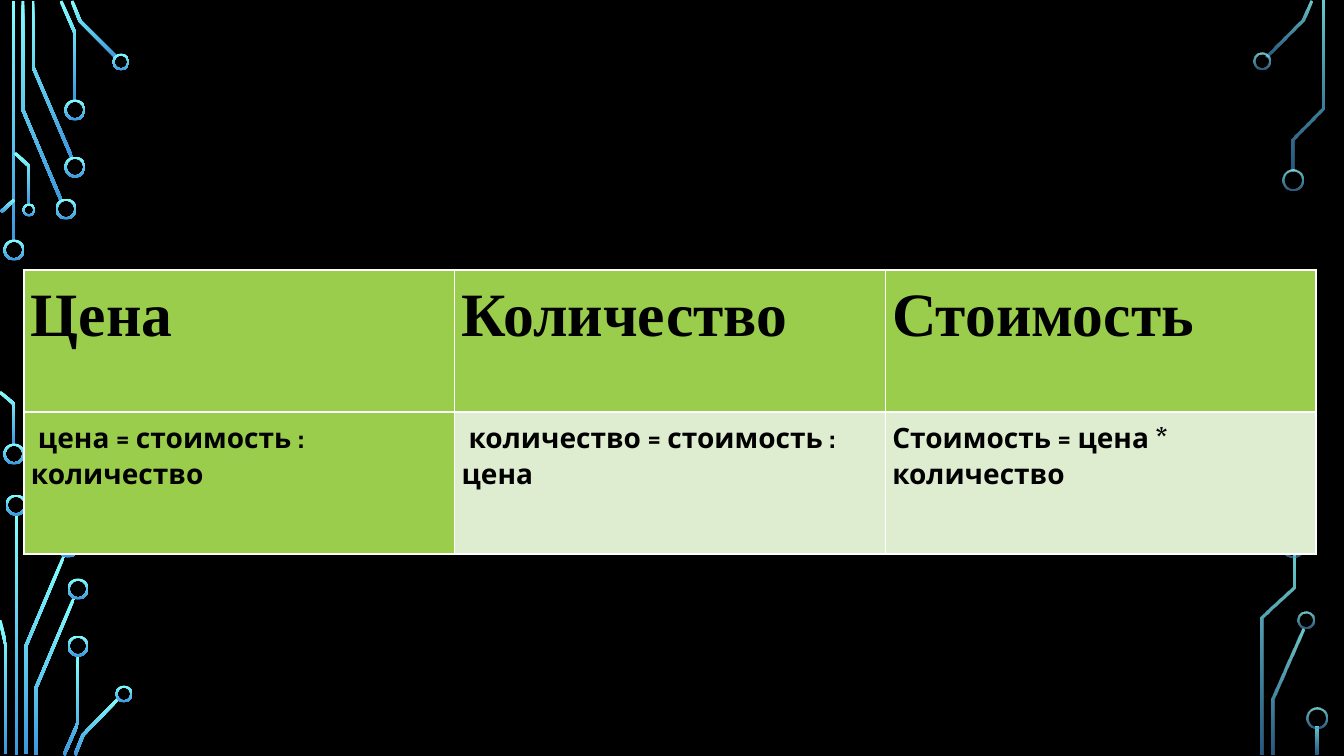
from dataclasses import dataclass
from math import hypot

from lxml import etree
from pptx import Presentation
from pptx.dml.color import RGBColor
from pptx.enum.shapes import MSO_SHAPE
from pptx.oxml.ns import qn
from pptx.util import Pt

DONUT, RECT = MSO_SHAPE.DONUT, MSO_SHAPE.RECTANGLE
SCALE = 914400 / 100.8


@dataclass(frozen=True)
class Theme:
    background: str = "000000"
    text: str = "000000"
    border: str = "FFFFFF"
    green: str = "9ACD4C"
    pale: str = "DEEDD0"
    glow: tuple = ("82FFFF", "3D97DE")
    solid: tuple = (100, 100)
    faded: tuple = (80, 60)
    head_font: str = "Times New Roman"
    head_size: int = 44
    body_font: str = "Cabin"
    body_size: int = 20


THEME = Theme()
TRACE_WIDTH = 3
RING_WIDTH = 2

# Circuit corners: box origin, opacity, bars (x, y, w, h), rings (cx, cy, d), traces
CORNERS = [
    dict(origin=(0, 0), opacity=THEME.solid,
         bars=[(12, 1, 3, 241)],
         rings=[(14, 250, 21), (14, 454, 21), (66, 209, 21), (75, 167, 21),
                (75, 110, 21), (121, 62, 17), (29, 210, 13)],
         traces=[[(61, 200), (23, 110), (23, 1)],
                 [(72, 158), (33, 67), (33, 1)],
                 [(75, 101), (75, 33), (61, 1)],
                 [(116, 57), (80, 21), (72, 1)],
                 [(1, 212), (14, 200)],
                 [(14, 444), (14, 404), (0, 392)],
                 [(29, 205), (29, 166), (15, 153)]]),
    dict(origin=(0, 500), opacity=THEME.solid,
         bars=[(15, 14, 3, 241)],
         rings=[(16, 5, 21), (68, 47, 21), (78, 89, 21), (78, 146, 21),
                (124, 194, 17)],
         traces=[[(26, 254), (26, 146), (64, 56)],
                 [(6, 254), (6, 146), (0, 120)],
                 [(36, 255), (36, 188), (74, 98)],
                 [(64, 255), (78, 223), (78, 155)],
                 [(75, 255), (83, 235), (119, 198)]]),
    dict(origin=(1240, 0), opacity=THEME.faded,
         bars=[],
         rings=[(22, 61, 17), (53, 180, 21)],
         traces=[[(27, 56), (63, 20), (71, 1)],
                 [(53, 170), (53, 139), (83, 108), (83, 1)]]),
    dict(origin=(1240, 500), opacity=THEME.faded,
         bars=[(76, 227, 3, 28)],
         rings=[(66, 120, 17), (53, 47, 21), (77, 218, 21)],
         traces=[[(33, 255), (33, 199), (63, 129)],
                 [(22, 255), (22, 118), (54, 88), (54, 56)]]),
]

HEADINGS = ["Цена", "Количество", "Стоимость"]
# Formula, cell colour, first-line indent
FORMULAS = [
    ("цена = стоимость : количество", THEME.green, 7),
    ("количество = стоимость : цена", THEME.pale, 7),
    ("Стоимость = цена * количество", THEME.pale, 0),
]


def px(n):
    return round(n * SCALE)


def rgb(value):
    return RGBColor.from_string(value)


def glow(s, opacity):
    """Fill a circuit part with the vertical gradient and no outline."""
    s.shadow.inherit = False
    s.line.fill.background()
    s.fill.gradient()
    s.fill.gradient_angle = 270
    for stop, color in zip(s.fill.gradient_stops, THEME.glow):
        stop.color.rgb = rgb(color)
    for clr, percent in zip(s._element.spPr.iter(qn("a:srgbClr")), opacity):
        if percent < 100:
            etree.SubElement(clr, qn("a:alpha"), val=str(percent * 1000))


def band(points, width):
    """Outline of a polyline of the given width, with mitred corners."""
    normals = []
    for (x1, y1), (x2, y2) in zip(points, points[1:]):
        length = hypot(x2 - x1, y2 - y1)
        normals.append(((y1 - y2) / length, (x2 - x1) / length))
    left, right = [], []
    for (x, y), a, b in zip(points, normals[:1] + normals, normals + normals[-1:]):
        k = width / 2 / (1 + a[0] * b[0] + a[1] * b[1])
        dx, dy = k * (a[0] + b[0]), k * (a[1] + b[1])
        left.append((x + dx, y + dy))
        right.append((x - dx, y - dy))
    return left + right[::-1]


def add_circuit(slide, origin, opacity, bars, rings, traces):
    left, top = origin
    shapes = slide.shapes
    # Straight bars
    for x, y, w, h in bars:
        glow(shapes.add_shape(RECT, px(left + x), px(top + y), px(w), px(h)), opacity)
    # Bent traces
    for points in traces:
        outline = [(px(left + x), px(top + y)) for x, y in band(points, TRACE_WIDTH)]
        builder = shapes.build_freeform(*outline[0])
        builder.add_line_segments(outline[1:], close=True)
        glow(builder.convert_to_shape(), opacity)
    # Ring ends
    for cx, cy, d in rings:
        s = shapes.add_shape(DONUT, px(left + cx - d / 2), px(top + cy - d / 2),
                             px(d), px(d))
        s.adjustments[0] = RING_WIDTH / d
        glow(s, opacity)


def set_borders(cell):
    tcPr = cell._tc.get_or_add_tcPr()
    for i, side in enumerate(("lnL", "lnR", "lnT", "lnB")):
        ln = etree.Element(qn(f"a:{side}"), w=str(Pt(1)))
        fill = etree.SubElement(ln, qn("a:solidFill"))
        etree.SubElement(fill, qn("a:srgbClr"), val=THEME.border)
        tcPr.insert(i, ln)


def fill_cell(cell, text, color, font, size, after=0, indent=0):
    cell.fill.solid()
    cell.fill.fore_color.rgb = rgb(color)
    set_borders(cell)
    for side in ("left", "right", "top", "bottom"):
        setattr(cell, f"margin_{side}", px(7))
    p = cell.text_frame.paragraphs[0]
    p.line_spacing = 1.07
    p.space_after = Pt(after)
    if indent:
        p._p.get_or_add_pPr().set("indent", str(px(indent)))
    r = p.add_run()
    r.text = text
    for name, value in dict(name=font, size=Pt(size), bold=True).items():
        setattr(r.font, name, value)
    r.font.color.rgb = rgb(THEME.text)


def add_formula_table(slide, x, y, w, h):
    frame = slide.shapes.add_table(2, len(HEADINGS), px(x), px(y), px(w), px(h))
    table = frame.table
    table.first_row = table.horz_banding = False
    # Heading row
    for col, text in enumerate(HEADINGS):
        fill_cell(table.cell(0, col), text, THEME.green,
                  THEME.head_font, THEME.head_size, after=6)
    # Formula row
    for col, (text, color, indent) in enumerate(FORMULAS):
        fill_cell(table.cell(1, col), text, color,
                  THEME.body_font, THEME.body_size, indent=indent)


def main():
    prs = Presentation()
    prs.slide_width, prs.slide_height = px(1344), px(756)
    slide = prs.slides.add_slide(prs.slide_layouts[6])
    slide.background.fill.solid()
    slide.background.fill.fore_color.rgb = rgb(THEME.background)
    for corner in CORNERS:
        add_circuit(slide, **corner)
    add_formula_table(slide, 24, 270, 1292, 284)
    prs.save("out.pptx")


if __name__ == "__main__":
    main()
